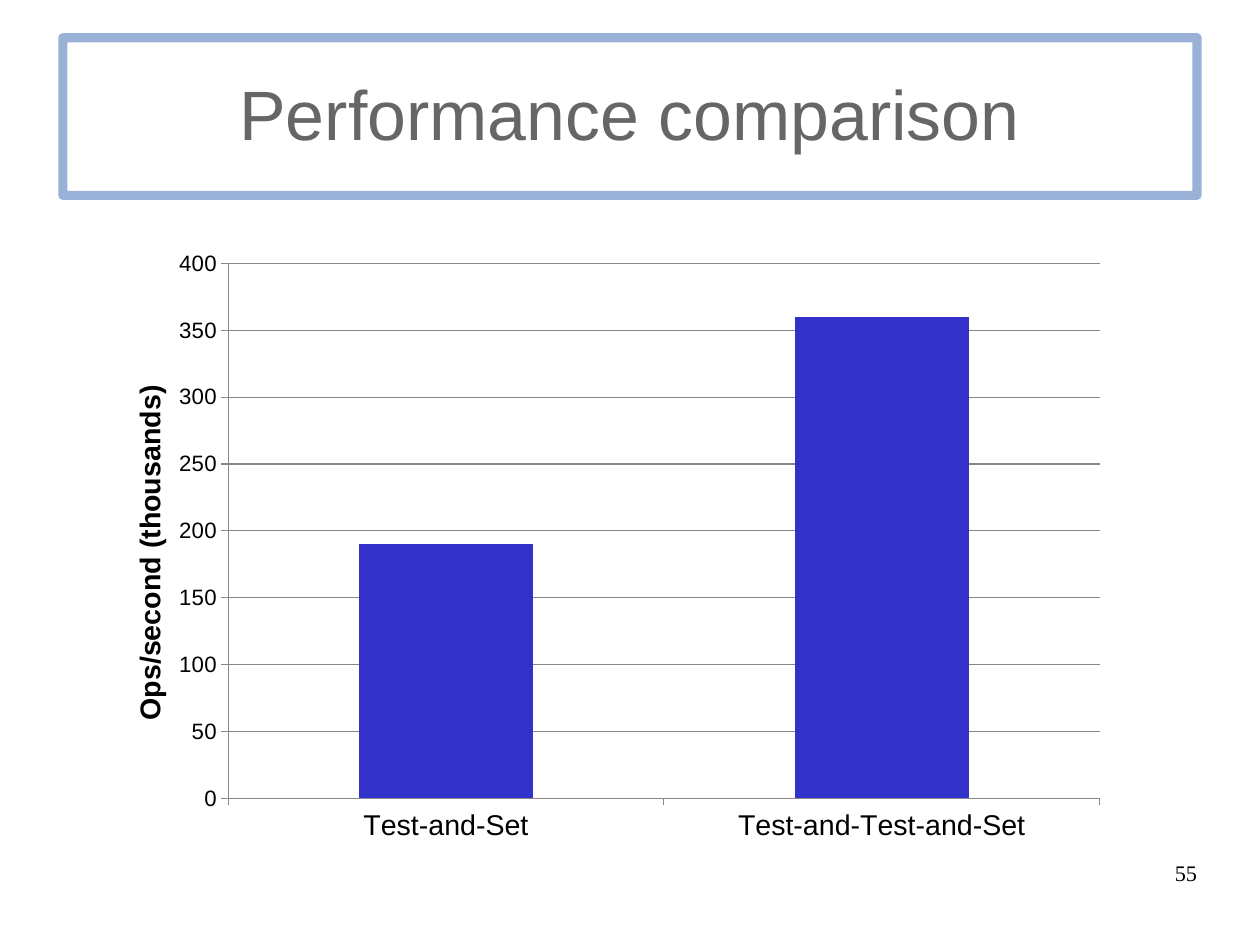
from lxml import etree
from pptx import Presentation
from pptx.chart.data import CategoryChartData
from pptx.dml.color import RGBColor
from pptx.enum.chart import XL_CHART_TYPE, XL_TICK_MARK
from pptx.enum.shapes import MSO_SHAPE
from pptx.enum.text import MSO_ANCHOR, PP_ALIGN
from pptx.oxml import parse_xml
from pptx.oxml.ns import nsdecls, qn
from pptx.util import Cm, Inches, Pt

COLUMNS = XL_CHART_TYPE.COLUMN_CLUSTERED
OUTSIDE = XL_TICK_MARK.OUTSIDE
RECT = MSO_SHAPE.RECTANGLE
TOP, MIDDLE = MSO_ANCHOR.TOP, MSO_ANCHOR.MIDDLE
CENTER, RIGHT = PP_ALIGN.CENTER, PP_ALIGN.RIGHT

# Content
TITLE = "Performance comparison"
PAGE = "55"
AXIS_TITLE = "Ops/second (thousands)"
OPS = {"Test-and-Set": 190, "Test-and-Test-and-Set": 360}
COLORS = {"frame": "3465AF", "title": "666666", "text": "000000",
          "bar": "3333CC", "grid": "878787"}

# Layout: left, top, width, height in inches on a 28 x 21 cm slide
SLIDE_W, SLIDE_H = Cm(28), Cm(21)
W = SLIDE_W.inches
MARGIN = 0.55
TITLE_BOX = (MARGIN, 0.33, W - 2 * MARGIN, 1.38)
CHART_BOX = (0.83, 2.09, 8.97, 5.38)
PAGE_BOX = (W - MARGIN - 2.57, 7.54, 2.57, 0.57)
# Shares of the chart
PLOT = {"x": 0.13, "y": 0.04, "w": 0.85, "h": 0.87}
AXIS_TITLE_AT = {"x": 0.03, "y": 0.23}


def rgb(name):
    return RGBColor.from_string(COLORS[name])


def inches(box):
    return [Inches(v) for v in box]


def set_font(font, size, color, name="Arial", bold=False):
    font.size, font.name, font.bold = Pt(size), name, bold
    font.color.rgb = rgb(color)


def write(shape, text, align, anchor, spacing, *font):
    tf = shape.text_frame
    tf.word_wrap = True
    tf.margin_left = tf.margin_top = tf.margin_right = tf.margin_bottom = 0
    tf.vertical_anchor = anchor
    p = tf.paragraphs[0]
    p.text, p.alignment, p.line_spacing = text, align, spacing
    set_font(p.font, *font)


def set_layout(part, index, shares, target=""):
    for old in part.findall(qn("c:layout")):
        part.remove(old)
    modes = "".join(f'<c:{k}Mode val="edge"/>' for k in "xy")
    values = "".join(f'<c:{k} val="{v}"/>' for k, v in shares.items())
    part.insert(index, parse_xml(
        f'<c:layout {nsdecls("c")}><c:manualLayout>{target}{modes}{values}'
        '</c:manualLayout></c:layout>'))


prs = Presentation()
prs.slide_width, prs.slide_height = SLIDE_W, SLIDE_H
s = prs.slides.add_slide(prs.slide_layouts[6])

# Framed title with a half-transparent, round-cornered line
frame = s.shapes.add_shape(RECT, *inches(TITLE_BOX))
frame.shadow.inherit = False
frame.fill.background()
frame.line.color.rgb = rgb("frame")
frame.line.width = Pt(5.75)
ln = frame.line._get_or_add_ln()
etree.SubElement(ln.find(".//" + qn("a:srgbClr")), qn("a:alpha"), val="50000")
etree.SubElement(ln, qn("a:round"))
write(frame, TITLE, CENTER, MIDDLE, 0.94, 44, "title")

# Chart
data = CategoryChartData()
data.categories = list(OPS)
data.add_series("Series 1", list(OPS.values()))
chart = s.shapes.add_chart(COLUMNS, *inches(CHART_BOX), data).chart
chart.has_legend = chart.has_title = False
set_font(chart.font, 10, "text")

plot = chart.plots[0]
plot.gap_width = 150
plot.vary_by_categories = False
fill = plot.series[0].format.fill
fill.solid()
fill.fore_color.rgb = rgb("bar")

# Axes
cat, val = chart.category_axis, chart.value_axis
for axis, size in ((cat, 18), (val, 14)):
    axis.major_tick_mark = OUTSIDE
    set_font(axis.tick_labels.font, size, "text")
    axis.format.line.color.rgb = rgb("grid")
val.minimum_scale, val.maximum_scale, val.major_unit = 0, 400, 50
val.has_major_gridlines = True
val.major_gridlines.format.line.color.rgb = rgb("grid")
p = val.axis_title.text_frame.paragraphs[0]
p.text = AXIS_TITLE
set_font(p.font, 18, "text", bold=True)

# Fixed places for the axis title and the inner plot area
set_layout(val.axis_title._element, 1, AXIS_TITLE_AT)
set_layout(chart._chartSpace.chart.plotArea, 0, PLOT,
           '<c:layoutTarget val="inner"/>')

# Page number
page = s.shapes.add_textbox(*inches(PAGE_BOX))
write(page, PAGE, RIGHT, TOP, 0.93, 14, "text", "Times New Roman")

prs.save("out.pptx")
